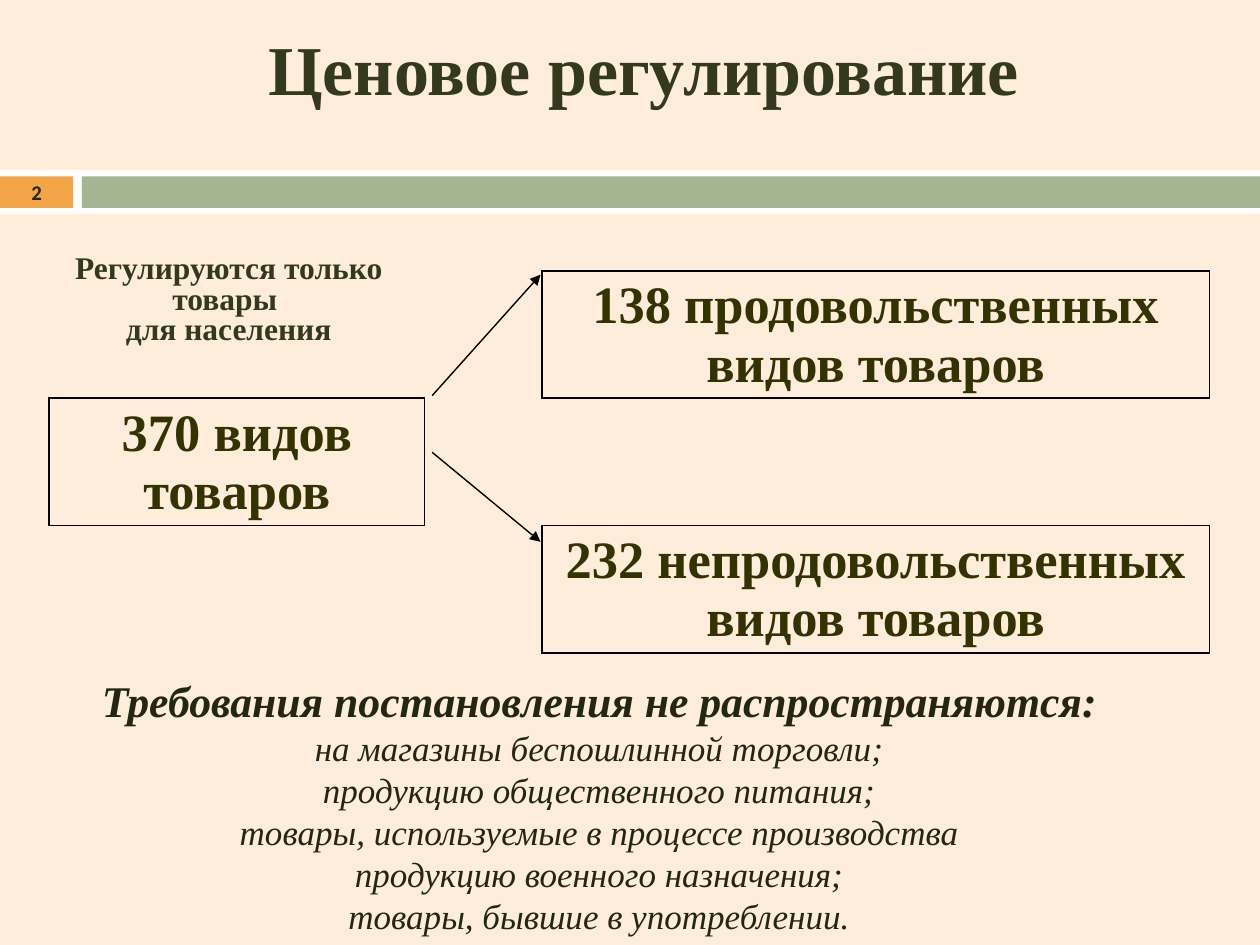
import lxml.etree
import pptx
import pptx.dml.color
import pptx.enum.shapes
import pptx.enum.text
import pptx.oxml.ns
import pptx.util

Inches, Pt = pptx.util.Inches, pptx.util.Pt
qn = pptx.oxml.ns.qn
CENTER = pptx.enum.text.PP_ALIGN.CENTER
MIDDLE = pptx.enum.text.MSO_ANCHOR.MIDDLE

COLORS = {
    "background": "FDEDDA", "white": "FFFFFF", "orange": "F3A447",
    "sage": "A5B592", "heading": "333A1C", "body": "222613",
    "cell": "333300", "line": "000000",
}
SERIF = "Times New Roman"
TITLE = {"name": SERIF, "size": Pt(40), "bold": True, "color": "heading"}
CAPTION = {**TITLE, "size": Pt(18)}
CELL = {**TITLE, "size": Pt(30), "color": "cell"}
NUMBER = {"name": "Calibri", "size": Pt(11.9), "bold": True, "color": "body"}
EXCLUSION = {"name": SERIF, "size": Pt(20), "italic": True, "color": "body"}
EXCLUSION_HEAD = {**EXCLUSION, "size": Pt(25), "bold": True}

GOODS = {
    (0, 2): "138 продовольственных видов товаров",
    (1, 0): "370 видов товаров",
    (2, 2): "232 непродовольственных видов товаров",
}
EXCLUSIONS = [
    "на магазины беспошлинной торговли;",
    "продукцию общественного питания;",
    "товары, используемые в процессе производства",
    "продукцию военного назначения;",
    "товары, бывшие в употреблении.",
]
SIDES = {"lnL": (0, -1), "lnR": (0, 1), "lnT": (-1, 0), "lnB": (1, 0)}


def rgb(name):
    return pptx.dml.color.RGBColor.from_string(COLORS[name])


class SlideBuilder:
    def __init__(self, deck):
        self.slide = deck.slides.add_slide(deck.slide_layouts[6])
        fill = self.slide.background.fill
        fill.solid()
        fill.fore_color.rgb = rgb("background")

    def bar(self, left, top, width, height, color):
        shape = self.slide.shapes.add_shape(
            pptx.enum.shapes.MSO_SHAPE.RECTANGLE,
            Inches(left), Inches(top), Inches(width), Inches(height))
        shape.shadow.inherit = False
        shape.fill.solid()
        shape.fill.fore_color.rgb = rgb(color)
        shape.line.fill.background()

    def fill_frame(self, frame, lines, spacing=None):
        """Fill a text frame with (text, style) pairs, one paragraph each."""
        for index, (text, style) in enumerate(lines):
            para = frame.add_paragraph() if index else frame.paragraphs[0]
            para.alignment = CENTER
            if spacing:
                para.line_spacing = spacing
            span = para.add_run()
            span.text = text
            for key, value in style.items():
                if key == "color":
                    span.font.color.rgb = rgb(value)
                else:
                    setattr(span.font, key, value)

    def text(self, left, top, width, height, lines, spacing=None, **frame_format):
        box = self.slide.shapes.add_textbox(
            Inches(left), Inches(top), Inches(width), Inches(height))
        frame = box.text_frame
        frame.word_wrap = True
        for key, value in frame_format.items():
            setattr(frame, key, value)
        self.fill_frame(frame, lines, spacing)

    def border(self, cell, side, visible):
        properties = cell._tc.get_or_add_tcPr()
        line = lxml.etree.SubElement(properties, qn(f"a:{side}"), w=str(Pt(1)))
        if visible:
            fill = lxml.etree.SubElement(line, qn("a:solidFill"))
            lxml.etree.SubElement(fill, qn("a:srgbClr"), val=COLORS["line"])
        else:
            lxml.etree.SubElement(line, qn("a:noFill"))

    def boxed_table(self, left, top, widths, row_height, rows, texts):
        """Table in which only the cells with text are outlined."""
        table = self.slide.shapes.add_table(
            rows, len(widths), Inches(left), Inches(top),
            Inches(sum(widths)), Inches(row_height * rows)).table
        table.first_row = table.horz_banding = False
        for column, width in zip(table.columns, widths):
            column.width = Inches(width)
        for row_index, row in enumerate(table.rows):
            row.height = Inches(row_height)
            for column_index, cell in enumerate(row.cells):
                place = (row_index, column_index)
                for side, (down, right) in SIDES.items():
                    neighbour = (row_index + down, column_index + right)
                    self.border(cell, side, place in texts or neighbour in texts)
                cell.fill.background()
                if place in texts:
                    cell.vertical_anchor = MIDDLE
                    cell.margin_left = cell.margin_right = Inches(0.01)
                    cell.margin_top, cell.margin_bottom = Inches(0.01), 0
                    self.fill_frame(cell.text_frame, [(texts[place], CELL)])

    def arrow(self, start, end):
        connector = self.slide.shapes.add_connector(
            pptx.enum.shapes.MSO_CONNECTOR.STRAIGHT,
            *(Inches(value) for value in start + end))
        connector.line.color.rgb = rgb("line")
        connector.line.width = Pt(0.79)
        lxml.etree.SubElement(
            connector.line._get_or_add_ln(), qn("a:tailEnd"), type="triangle")
        lxml.etree.SubElement(connector._element.spPr, qn("a:effectLst"))


def main():
    deck = pptx.Presentation()
    deck.slide_width, deck.slide_height = Inches(10), Inches(7.5)
    page = SlideBuilder(deck)

    page.bar(0, 1.35, 10, 0.35, "white")
    page.bar(0, 1.4, 0.58, 0.25, "orange")
    page.bar(0.65, 1.4, 9.35, 0.25, "sage")
    page.text(0.22, 0.33, 9.78, 0.54, [("Ценовое регулирование", TITLE)], 0.8,
              margin_left=0, margin_right=0, margin_top=0, margin_bottom=0)
    page.text(0, 1.39, 0.58, 0.27, [("2", NUMBER)], vertical_anchor=MIDDLE)

    page.boxed_table(0.39, 2.15, [2.98, 0.93, 5.3], 1.01, 3, GOODS)
    page.arrow((3.43, 3.14), (4.29, 2.18))
    page.arrow((3.43, 3.59), (4.29, 4.3))

    heading = ("Требования постановления не распространяются:", EXCLUSION_HEAD)
    page.text(0.58, 5.3, 8.35, 2.2,
              [heading] + [(line, EXCLUSION) for line in EXCLUSIONS])
    page.text(0.22, 1.98, 3.19, 0.83,
              [("Регулируются только товары ", CAPTION),
               ("для населения", CAPTION)], 0.8)
    deck.save("out.pptx")


if __name__ == "__main__":
    main()
